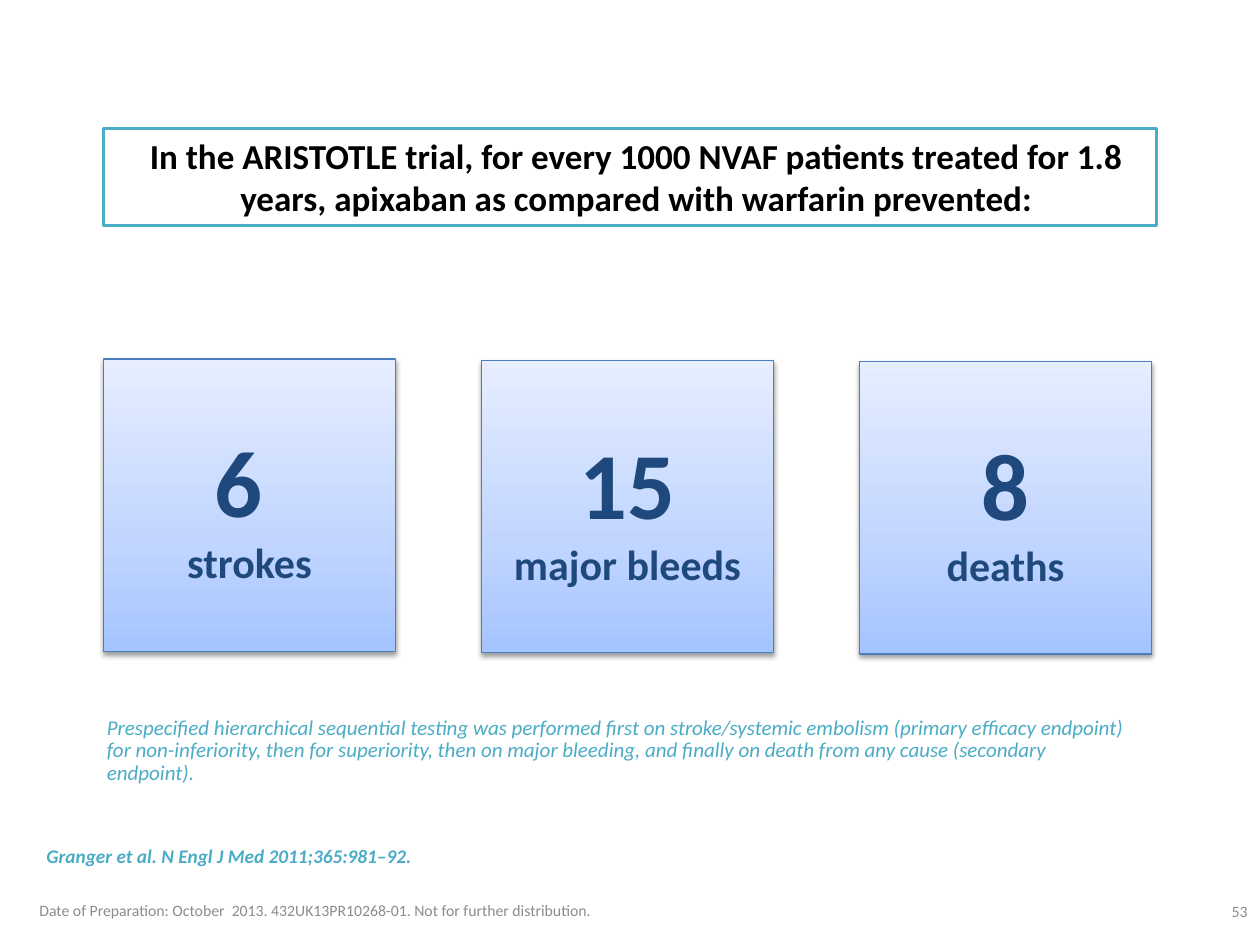
from lxml.etree import SubElement
from pptx import Presentation
from pptx.dml.color import RGBColor
from pptx.enum.shapes import MSO_SHAPE as SHAPE
from pptx.enum.text import MSO_ANCHOR as ANCHOR, PP_ALIGN as ALIGN
from pptx.oxml.ns import qn
from pptx.util import Inches, Pt

TEAL = RGBColor(0x4B, 0xAC, 0xC6)
NAVY = RGBColor(0x1F, 0x49, 0x7D)
BLUE = RGBColor(0x4B, 0x7E, 0xBC)
GREY = RGBColor(0x8C, 0x8C, 0x8C)
BLACK = RGBColor(0, 0, 0)
CARD_STOPS = [
    (0, RGBColor(0xA4, 0xC4, 0xFF)),
    (35, RGBColor(0xBF, 0xD4, 0xFF)),
    (100, RGBColor(0xE6, 0xEE, 0xFF)),
]


def add_run(p, text, font="Calibri", size=12, color=BLACK, bold=False, italic=False):
    r = p.add_run()
    r.text = text
    r.font.name = font
    r.font.size = Pt(size)
    r.font.color.rgb = color
    r.font.bold = bold
    r.font.italic = italic


class SlideBuilder:
    """Draws styled elements on the current slide."""

    def __init__(self, slide):
        self.shapes = slide.shapes

    def frame(self, sp, anchor, align):
        tf = sp.text_frame
        tf.word_wrap = True
        tf.vertical_anchor = anchor
        p = tf.paragraphs[0]
        p.alignment = align
        return p

    def box(self, kind, at, color, width):
        sp = self.shapes.add_shape(kind, *map(Inches, at))
        sp.shadow.inherit = False
        sp.line.color.rgb = color
        sp.line.width = Pt(width)
        return sp

    def headline(self, text, at):
        sp = self.box(SHAPE.RECTANGLE, at, TEAL, 2)
        sp.fill.background()
        p = self.frame(sp, ANCHOR.TOP, ALIGN.CENTER)
        p._p.get_or_add_pPr().set("marL", str(Inches(0.1)))
        add_run(p, text, size=20, bold=True)

    def card(self, number, label, at):
        sp = self.box(SHAPE.ROUNDED_RECTANGLE, at, BLUE, 0.75)
        sp.adjustments[0] = 0
        self.gradient(sp)
        self.shadow(sp)
        p = self.frame(sp, ANCHOR.MIDDLE, ALIGN.CENTER)
        tf = sp.text_frame
        tf.margin_left = tf.margin_right = tf.margin_top = tf.margin_bottom = 0
        add_run(p, number, size=54, color=NAVY, bold=True)
        p.add_line_break()
        add_run(p, label, size=24, color=NAVY, bold=True)

    def gradient(self, sp):
        sp.fill.gradient()
        sp.fill.gradient_angle = 90
        stops = sp._element.spPr.find(qn("a:gradFill")).find(qn("a:gsLst"))
        for stop in list(stops):
            stops.remove(stop)
        for pos, color in CARD_STOPS:
            stop = SubElement(stops, qn("a:gs"), pos=str(pos * 1000))
            SubElement(stop, qn("a:srgbClr"), val=str(color))

    def shadow(self, sp):
        effects = sp._element.spPr.find(qn("a:effectLst"))
        outer = SubElement(effects, qn("a:outerShdw"), blurRad=str(Pt(3.1)),
                           dist=str(Pt(1.6)), dir="5400000", rotWithShape="0")
        color = SubElement(outer, qn("a:srgbClr"), val=str(BLACK))
        SubElement(color, qn("a:alpha"), val="38000")

    def text(self, text, at, anchor=ANCHOR.TOP, align=ALIGN.LEFT, spacing=1.0,
             hanging=0, **style):
        sp = self.shapes.add_textbox(*map(Inches, at))
        p = self.frame(sp, anchor, align)
        p.line_spacing = spacing
        if hanging:
            pPr = p._p.get_or_add_pPr()
            pPr.set("marL", str(Inches(hanging)))
            pPr.set("indent", str(-Inches(hanging)))
        add_run(p, text, **style)


def main():
    prs = Presentation()
    prs.slide_width, prs.slide_height = Inches(10), Inches(7.5)
    s = SlideBuilder(prs.slides.add_slide(prs.slide_layouts[6]))

    s.headline("In the ARISTOTLE trial, for every 1000 NVAF patients treated for 1.8 "
               "years, apixaban as compared with warfarin prevented:",
               (0.82, 1.02, 8.36, 0.77))
    outcomes = [("6 ", "strokes"), ("15", "major bleeds"), ("8", "deaths")]
    for i, (number, label) in enumerate(outcomes):
        s.card(number, label, (0.82 + 3 * i, 2.85 + 0.01 * i, 2.32, 2.32))

    s.text("Prespecified hierarchical sequential testing was performed first on "
           "stroke/systemic embolism (primary efficacy endpoint) for non-inferiority, "
           "then for superiority, then on major bleeding, and finally on death from "
           "any cause (secondary endpoint).",
           (0.75, 5.64, 8.36, 0.65), spacing=0.9, color=TEAL, italic=True)
    s.text("53", (7.67, 7.11, 2.33, 0.22), align=ALIGN.RIGHT, size=9, color=GREY)
    s.text("Granger et al. N Engl J Med 2011;365:981–92.", (0.27, 6.64, 6.3, 0.29),
           anchor=ANCHOR.BOTTOM, hanging=0.25, size=11, color=TEAL, bold=True, italic=True)
    s.text("Date of Preparation: October  2013. 432UK13PR10268-01. "
           "Not for further distribution.", (0, 7.1, 5, 0.25),
           anchor=ANCHOR.MIDDLE, align=ALIGN.CENTER, size=9, color=GREY)
    prs.save("out.pptx")


if __name__ == "__main__":
    main()
